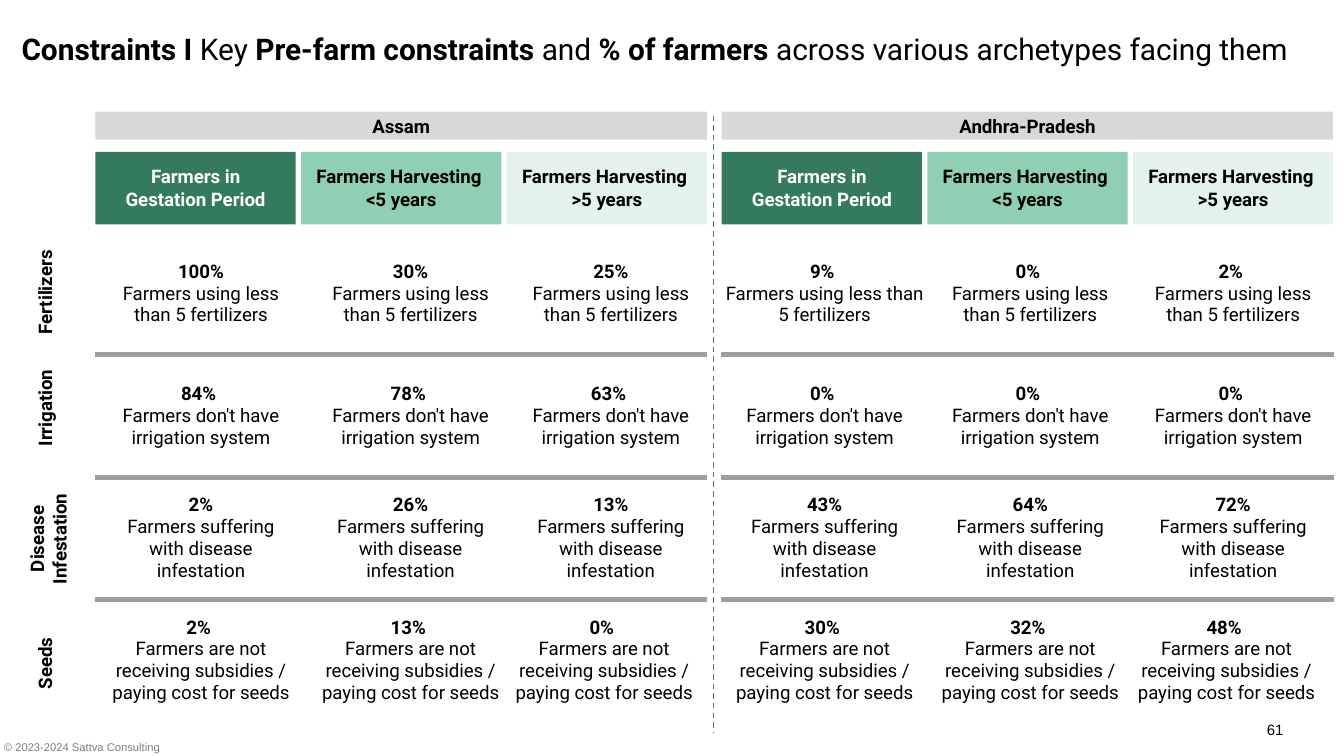
from lxml import etree
from pptx import Presentation
from pptx.dml.color import RGBColor
from pptx.enum.dml import MSO_LINE
from pptx.enum.shapes import MSO_CONNECTOR, MSO_SHAPE
from pptx.enum.text import MSO_ANCHOR as Anchor, PP_ALIGN as Align
from pptx.oxml.ns import qn
from pptx.util import Inches, Pt

BLACK = RGBColor(0x00, 0x00, 0x00)
WHITE = RGBColor(0xFF, 0xFF, 0xFF)
GREY_TEXT = RGBColor(0x7F, 0x7F, 0x7F)
STATE_GREY = RGBColor(0xD8, 0xD8, 0xD8)
RULE_GREY = RGBColor(0x9E, 0x9E, 0x9E)
DARK_GREEN = RGBColor(0x34, 0x7A, 0x5C)
MID_GREEN = RGBColor(0x8F, 0xCF, 0xB4)
PALE_GREEN = RGBColor(0xE3, 0xF2, 0xED)
DIVIDER_GREEN = RGBColor(0x44, 0x80, 0x50)


def write(frame, paragraphs, size=10, color=BLACK, font="Roboto",
          align=Align.CENTER, anchor=Anchor.TOP, margins=(0.1, 0.1)):
    """Fill a text frame; each paragraph is a list of (text, bold) runs."""
    frame.word_wrap = True
    frame.vertical_anchor = anchor
    frame.margin_left = frame.margin_right = Inches(margins[0])
    frame.margin_top = frame.margin_bottom = Inches(margins[1])
    for i, runs in enumerate(paragraphs):
        paragraph = frame.add_paragraph() if i else frame.paragraphs[0]
        paragraph.alignment = align
        for text, bold in runs:
            run = paragraph.add_run()
            run.text = text
            run.font.name, run.font.size, run.font.bold = font, Pt(size), bold
            run.font.color.rgb = color


def set_borders(cell, borders):
    """Borders are (color, points) in the order left, right, top, bottom."""
    properties = cell._tc.get_or_add_tcPr()
    for i, (side, (color, points)) in enumerate(zip("LRTB", borders)):
        line = etree.Element(qn(f"a:ln{side}"), w=str(Pt(points)))
        fill = etree.SubElement(line, qn("a:solidFill"))
        etree.SubElement(fill, qn("a:srgbClr"), val=str(color))
        properties.insert(i, line)


# Widescreen slide, 16:9
prs = Presentation()
prs.slide_width = Inches(10)
prs.slide_height = Inches(10 * 9 / 16)
slide = prs.slides.add_slide(prs.slide_layouts[6])
shapes = slide.shapes

# Copyright line and title
copyright_line = shapes.add_textbox(Inches(-0.04), Inches(5.47), Inches(1.46), Inches(0.18))
write(copyright_line.text_frame, [[("© 2023-2024 Sattva Consulting", False)]],
      size=6, color=GREY_TEXT, font="Arial", align=Align.LEFT, margins=(0.07, 0.04))

title = shapes.add_textbox(Inches(0.09), Inches(0.13), Inches(9.72), Inches(0.49))
write(title.text_frame, [[
    ("Constraints I ", True), ("Key", False), (" Pre-farm constraints", True),
    (" and ", False), ("% of farmers ", True),
    ("across various archetypes facing them", False),
]], size=16, align=Align.LEFT, anchor=Anchor.MIDDLE, margins=(0.07, 0.04))
title.text_frame.paragraphs[0].line_spacing = 0.9

# Content: one row per constraint, one table per state
archetypes = [
    (["Farmers in Gestation Period"], DARK_GREEN, WHITE),
    (["Farmers Harvesting ", "<5 years"], MID_GREEN, BLACK),
    (["Farmers Harvesting ", ">5 years"], PALE_GREEN, BLACK),
]
constraints = [
    "Farmers using less than 5 fertilizers",
    "Farmers don't have irrigation system",
    "Farmers suffering with disease infestation",
    "Farmers are not receiving subsidies / paying cost for seeds",
]
# name, left, column widths, shares, cells without left and right margins
states = [
    ("Assam", 0.71, (1.57, 1.55, 1.43),
     [("100%", "30%", "25%"), ("84% ", "78% ", "63% "),
      ("2%", "26%", "13%"), ("2% ", "13% ", "0% ")], {(0, 2), (1, 2)}),
    ("Andhra-Pradesh", 5.37, (1.53, 1.53, 1.49),
     [("9% ", "0% ", "2% "), ("0% ", "0% ", "0% "),
      ("43%", "64%", "72%"), ("30% ", "32% ", "48% ")], {(0, 0), (1, 2)}),
]
row_height = 0.91
hairline, rule = (WHITE, 0.75), (RULE_GREY, 3)
last_row = len(constraints) - 1

for state, left, widths, shares, tight_cells in states:
    # State band and archetype headers
    band = [(left, 0.83, 4.55, 0.21, [state], STATE_GREY, BLACK, Anchor.MIDDLE)]
    headers = [(left + 1.53 * i, 1.13, 1.49, 0.54, lines, fill, color, Anchor.TOP)
               for i, (lines, fill, color) in enumerate(archetypes)]
    for x, y, width, height, lines, fill, color, anchor in band + headers:
        box = shapes.add_shape(MSO_SHAPE.RECTANGLE, Inches(x), Inches(y),
                               Inches(width), Inches(height))
        box.shadow.inherit = False
        box.fill.solid()
        box.fill.fore_color.rgb = fill
        box.line.fill.background()
        write(box.text_frame, [[(line, True)] for line in lines],
              color=color, anchor=anchor)

    # Share of farmers facing each constraint
    table = shapes.add_table(len(constraints), len(widths), Inches(left), Inches(1.73),
                             Inches(sum(widths)),
                             Inches(row_height * len(constraints))).table
    table.first_row = table.horz_banding = False
    for column, width in zip(table.columns, widths):
        column.width = Inches(width)
    for r, constraint in enumerate(constraints):
        table.rows[r].height = Inches(row_height)
        for c, share in enumerate(shares[r]):
            cell = table.cell(r, c)
            write(cell.text_frame, [[(share, True)], [(constraint, False)]])
            cell.vertical_anchor = Anchor.MIDDLE
            side = 0 if (r, c) in tight_cells else 0.1
            cell.margin_left = Inches(0 if (r, c) == (last_row, 2) else side)
            cell.margin_right = Inches(side)
            cell.margin_top = cell.margin_bottom = Inches(0.1)
            cell.fill.background()
            set_borders(cell, [hairline, hairline,
                               rule if r else hairline,
                               rule if r < last_row else hairline])

# Dashed divider between the states
divider = shapes.add_connector(MSO_CONNECTOR.STRAIGHT, Inches(5.31), Inches(0.86),
                               Inches(5.31), Inches(5.45))
divider.line.color.rgb = DIVIDER_GREEN
divider.line.width = Pt(0.75)
divider.line.dash_style = MSO_LINE.DASH
etree.SubElement(divider._element.spPr, qn("a:effectLst"))

# Rotated row labels
for label, x, y, width, height in [
    ("Fertilizers", -0.08, 1.99, 0.86, 0.37),
    ("Irrigation", -0.08, 2.85, 0.86, 0.37),
    ("Disease Infestation", -0.24, 3.74, 1.2, 0.54),
    ("Seeds", -0.08, 4.75, 0.86, 0.37),
]:
    row_label = shapes.add_textbox(Inches(x), Inches(y), Inches(width), Inches(height))
    row_label.rotation = 270
    write(row_label.text_frame, [[(label, True)]])

# Page number
page_number = shapes.add_textbox(Inches(9.01), Inches(5.33), Inches(0.6), Inches(0.43))
write(page_number.text_frame, [[("61", False)]], size=8, font="Arial",
      align=Align.RIGHT, margins=(0.06, 0.03))

prs.save("out.pptx")
